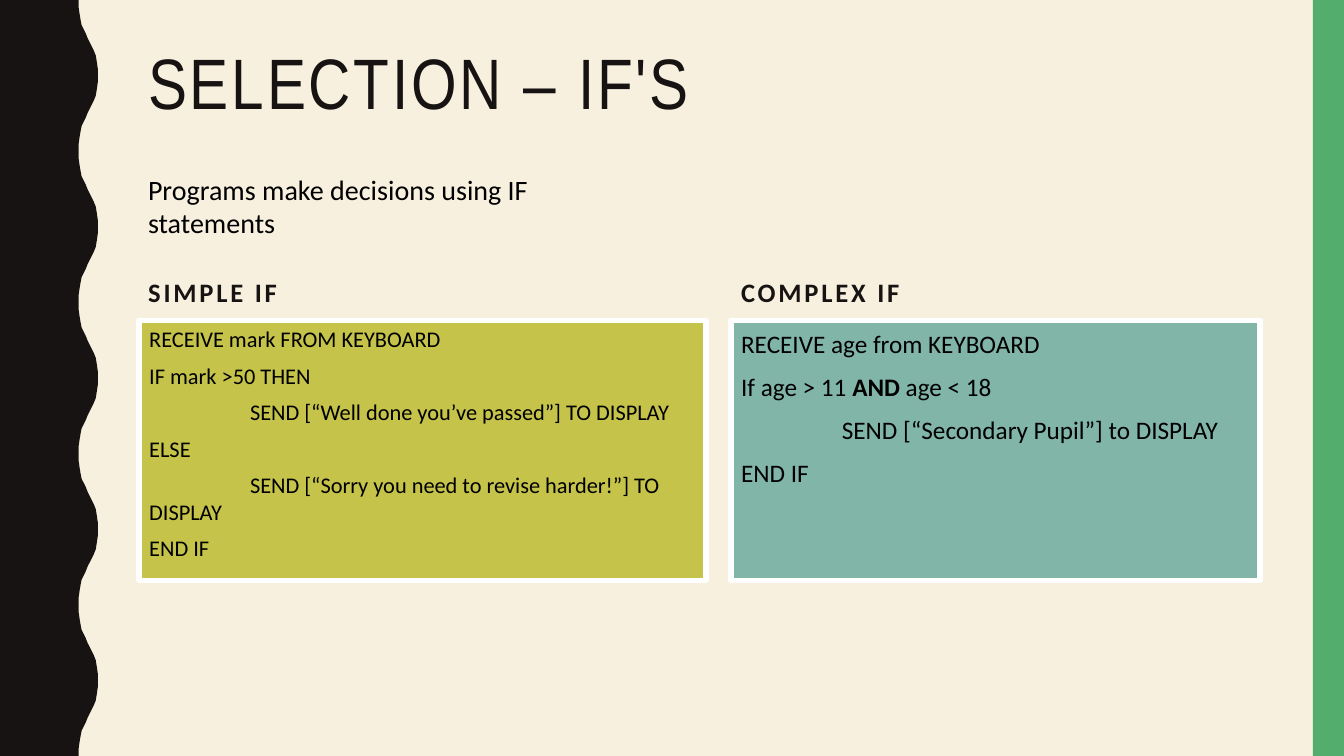
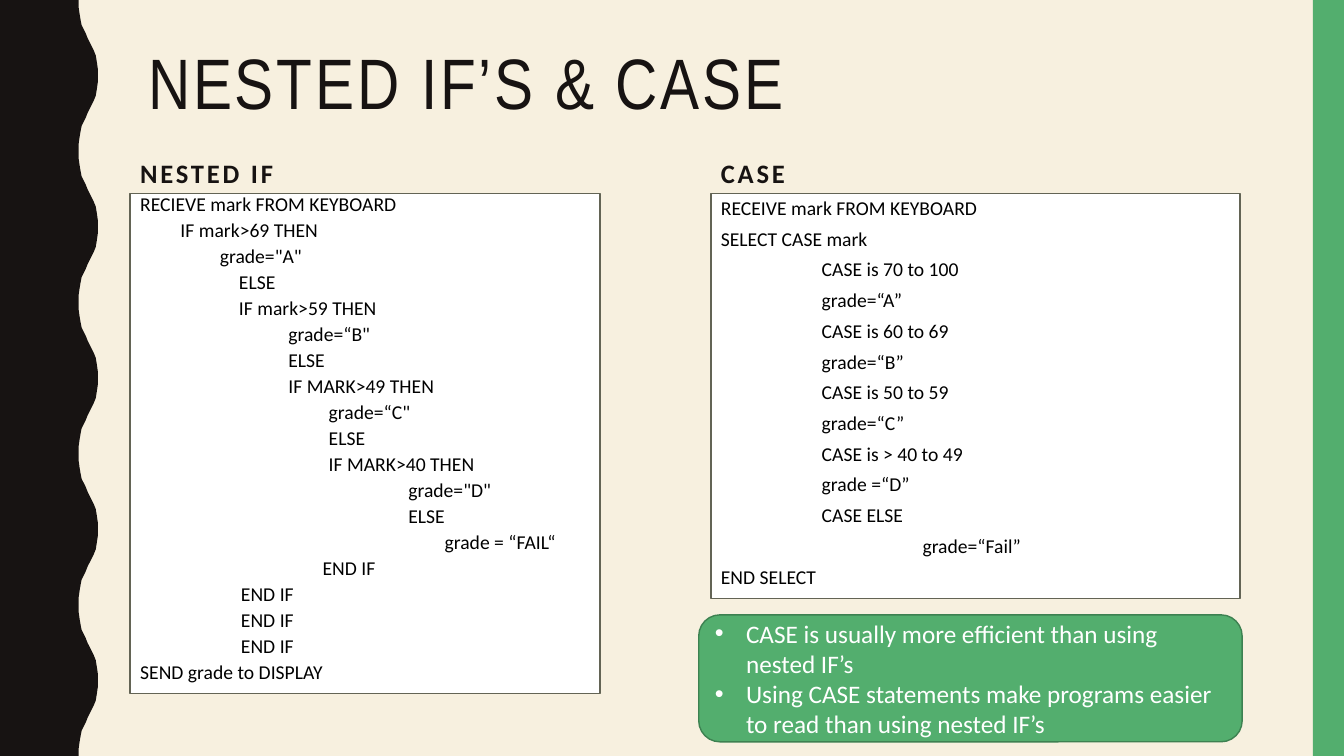
from dataclasses import dataclass
from lxml.etree import SubElement as Sub
from pptx import Presentation
from pptx.dml.color import RGBColor as RGB
from pptx.enum.shapes import MSO_SHAPE as Shape
from pptx.enum.text import MSO_ANCHOR as Anchor, MSO_AUTO_SIZE as Auto, PP_ALIGN as Align
from pptx.oxml.ns import qn
from pptx.util import Pt


@dataclass(frozen=True)
class Theme:
    paper: str = "F7F0DF"
    ink: str = "171312"
    black: str = "000000"
    white: str = "FFFFFF"
    green: str = "53AE6E"
    moss: str = "3D8151"
    lime: str = "C5C34A"
    teal: str = "81B5A8"
    grey: str = "636455"
    head: str = "Arial Narrow"
    body: str = "Calibri"
    title: int = 51
    lead: int = 20
    label: int = 19
    note: int = 18
    code: int = 16
    small: int = 14
    gap: float = 6.8


T = Theme()
PX = 9144  # 100 px to the inch
WIDE, HIGH = 1333, 750

# Code lines: (indent in px, text); *stars* mark bold
SIMPLE = [
    (0, "RECEIVE mark FROM KEYBOARD"),
    (0, "IF mark >50 THEN"),
    (100, "SEND [“Well done you’ve passed”] TO DISPLAY"),
    (0, "ELSE"),
    (100, "SEND [“Sorry you need to revise harder!”] TO DISPLAY"),
    (0, "END IF"),
]
COMPLEX = [
    (0, "RECEIVE age from KEYBOARD"),
    (0, "If age > 11 *AND* age < 18"),
    (100, "SEND [“Secondary Pupil”] to DISPLAY"),
    (0, "END IF"),
]
NESTED = [
    (0, "RECIEVE mark FROM KEYBOARD"),
    (40, "IF mark>69 THEN"),
    (79, 'grade="A"'),
    (98, "ELSE"),
    (98, "IF mark>59 THEN"),
    (147, 'grade=“B"'),
    (147, "ELSE"),
    (147, "IF MARK>49 THEN"),
    (187, 'grade=“C"'),
    (187, "ELSE"),
    (187, "IF MARK>40 THEN"),
    (266, 'grade="D"'),
    (266, "ELSE"),
    (302, "grade = “FAIL“"),
    (181, "END IF"),
    (100, "END IF"),
    (100, "END IF"),
    (100, "END IF"),
    (0, "SEND grade to DISPLAY"),
]
CASE = [
    (0, "RECEIVE mark FROM KEYBOARD"),
    (0, "SELECT CASE mark"),
    (100, "CASE is 70 to 100"),
    (100, "grade=“A”"),
    (100, "CASE is 60 to 69"),
    (100, "grade=“B”"),
    (100, "CASE is 50 to 59"),
    (100, "grade=“C”"),
    (100, "CASE is > 40 to 49"),
    (100, "grade =“D”"),
    (100, "CASE ELSE"),
    (200, "grade=“Fail”"),
    (0, "END SELECT"),
]
LEAD = "Programs make decisions using IF statements"
NOTES = [
    "CASE is usually more efficient than using nested IF’s",
    "Using CASE statements make programs easier to read than using nested IF’s",
]

# Each panel: label, label box, code, code box, fill, line, line width, size, line spacing
SLIDES = [
    ("SELECTION – IF'S", [
        ("SIMPLE IF", (137, 241, 525, 69), SIMPLE, (138, 318, 562, 258),
         T.lime, T.white, 4, T.code, 1),
        ("COMPLEX IF", (725, 241, 525, 69), COMPLEX, (725, 318, 525, 258),
         T.teal, T.white, 4, T.note, 1.1),
    ]),
    ("NESTED IF’S & CASE", [
        ("NESTED IF", (129, 123, 525, 69), NESTED, (129, 192, 466, 496),
         T.white, T.grey, 1, T.small, 0.7),
        ("CASE", (705, 123, 525, 69), CASE, (705, 192, 525, 402),
         T.white, T.grey, 1, T.small, 0.9),
    ]),
]

# Half a wave of the left edge: (down, across)
HALF = [(0, 78), (7, 78), (14, 79), (20, 80), (25, 81), (29, 83), (33, 85), (38, 87),
        (42, 89), (46, 91), (50, 93), (55, 95), (61, 96), (68, 97), (75, 97)]
WAVE = 150


def emu(box):
    return [n * PX for n in box]


def place(shape, box):
    shape.left, shape.top, shape.width, shape.height = emu(box)


def paint(shape, fill, line=None, width=1):
    shape.fill.solid()
    shape.fill.fore_color.rgb = RGB.from_string(fill)
    if line:
        shape.line.color.rgb = RGB.from_string(line)
        shape.line.width = Pt(width)
    else:
        shape.line.fill.background()


def write(shape, rows, size, color=T.black, font=T.body, bold=False, track=0,
          lines=1, gap=0, anchor=Anchor.TOP, bullet=None, hang=0):
    """Fill a shape with (indent, text) rows in one format."""
    frame = shape.text_frame
    frame.word_wrap = True
    frame.auto_size = Auto.NONE
    frame.vertical_anchor = anchor
    for i, (inset, text) in enumerate(rows):
        para = frame.add_paragraph() if i else frame.paragraphs[0]
        para.alignment = Align.LEFT
        para.line_spacing = float(lines)
        para.space_before = Pt(gap)
        props = para._p.get_or_add_pPr()
        props.set("marL", str(hang * PX))
        props.set("indent", str((inset - hang) * PX))
        if bullet:
            Sub(props, qn("a:buFont"), typeface="Arial")
            Sub(props, qn("a:buChar"), char=bullet)
        else:
            Sub(props, qn("a:buNone"))
        for j, part in enumerate(text.split("*")):
            run = para.add_run()
            run.text = part
            run.font.name = font
            run.font.size = Pt(size)
            run.font.bold = bold or j % 2 == 1
            run.font.color.rgb = RGB.from_string(color)
            if track:
                run._r.get_or_add_rPr().set("spc", str(track * 100))


def add_bands(deck, slide):
    """Draw the wavy and green bands, then move them to the master."""
    cycle = HALF + [(WAVE - y, x) for y, x in HALF[-2::-1]]
    edge = [(x, top + y) for top in range(0, HIGH, WAVE) for y, x in cycle]
    pen = slide.shapes.build_freeform(0, 0, scale=PX)
    pen.add_line_segments(edge + [(0, HIGH)], close=True)
    wave = pen.convert_to_shape()
    paint(wave, T.ink)
    strip = slide.shapes.add_shape(Shape.RECTANGLE, *emu((1302, 0, 31, HIGH)))
    paint(strip, T.green)
    tree = deck.slide_master.element.cSld.spTree
    for shape in (strip, wave):
        shape.shadow.inherit = False
        tree.insert(2, shape._element)


def add_page(deck, title, panels):
    slide = deck.slides.add_slide(deck.slide_layouts.get_by_name("Comparison"))
    head, *slots = slide.placeholders
    place(head, (137, 42, 1112, 163))
    write(head, [(0, title)], T.title, T.ink, T.head, track=2, lines=0.9)
    for panel, name, code in zip(panels, slots[::2], slots[1::2]):
        label, spot, rows, box, fill, line, width, size, lines = panel
        place(name, spot)
        write(name, [(0, label)], T.label, T.ink, bold=True, track=2,
              gap=T.gap, anchor=Anchor.BOTTOM)
        place(code, box)
        paint(code, fill, line, width)
        write(code, rows, size, lines=lines, gap=T.gap)
    return slide


def main():
    deck = Presentation()
    deck.slide_width, deck.slide_height = WIDE * PX, HIGH * PX
    back = deck.slide_master.background.fill
    back.solid()
    back.fore_color.rgb = RGB.from_string(T.paper)
    first, second = [add_page(deck, *page) for page in SLIDES]
    add_bands(deck, first)

    # Opening line of the first slide
    lead = first.shapes.add_textbox(*emu((137, 166, 527, 74)))
    write(lead, [(0, LEAD)], T.lead)

    # Rounded note on the second slide
    note = second.shapes.add_shape(Shape.ROUNDED_RECTANGLE, *emu((693, 610, 539, 126)))
    note.shadow.inherit = False
    paint(note, T.green, T.moss)
    write(note, [(0, text) for text in NOTES], T.note, T.white,
          anchor=Anchor.MIDDLE, bullet="•", hang=31)
    deck.save("out.pptx")


if __name__ == "__main__":
    main()
